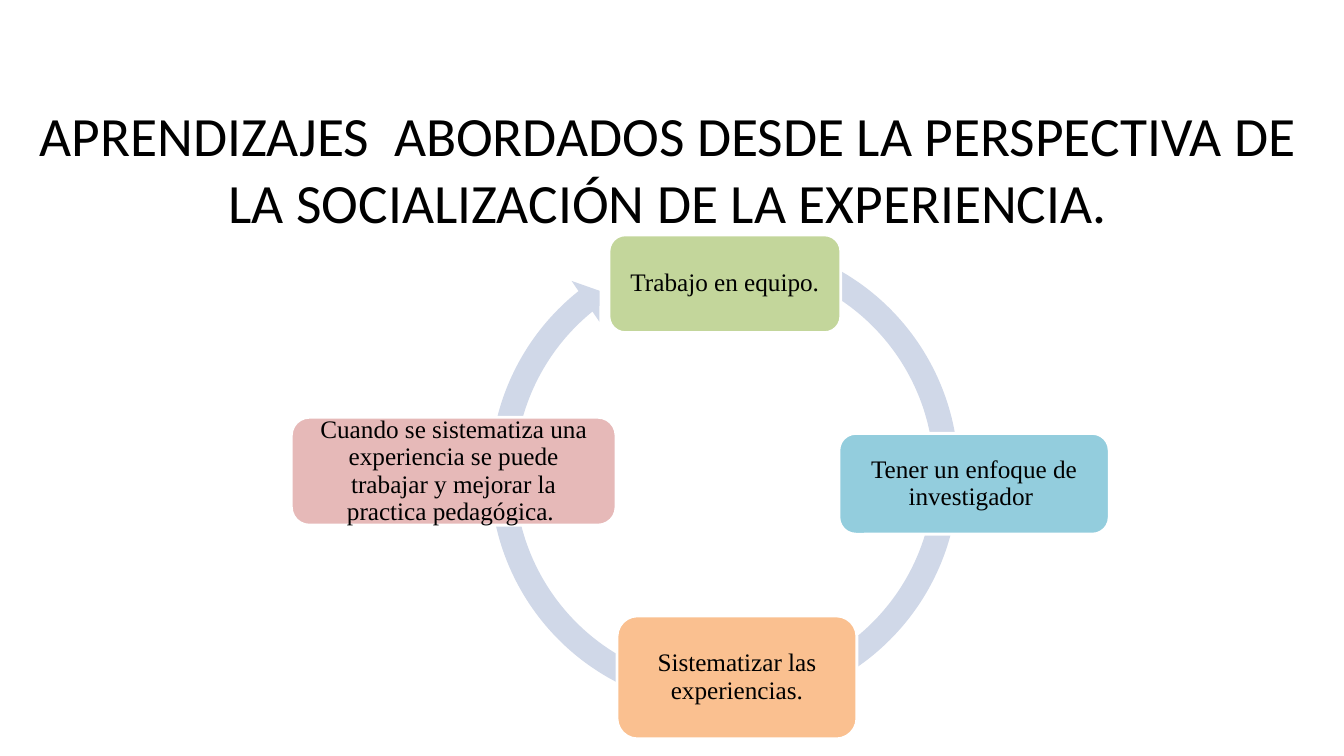
from dataclasses import dataclass

from pptx import Presentation
from pptx.dml.color import RGBColor
from pptx.enum.shapes import MSO_SHAPE as Shape
from pptx.enum.text import MSO_ANCHOR as Anchor, PP_ALIGN as Align
from pptx.util import Inches, Pt


@dataclass(frozen=True)
class Theme:
    ink: str = "000000"
    paper: str = "FFFFFF"
    ring: str = "D0D8E8"
    green: str = "C3D69B"
    blue: str = "93CDDD"
    orange: str = "FAC090"
    pink: str = "E6B9B8"
    title_font: str = "Calibri"
    step_font: str = "Times New Roman"
    title_size: float = 39.6
    step_size: float = 18
    border: float = 2


class CycleSlide:
    """Draws on one slide, with places given in percent of its width and height."""

    def __init__(self, deck, theme):
        self.deck = deck
        self.theme = theme
        self.page = deck.slides.add_slide(deck.slide_layouts[6])

    def place(self, left, top, width, height):
        across, down = self.deck.slide_width / 100, self.deck.slide_height / 100
        return [round(size) for size in (left * across, top * down, width * across, height * down)]

    def set_text(self, box, words, font, size, inset=(0.1, 0.05), spacing=1.0):
        frame = box.text_frame
        side, edge = (Inches(length) for length in inset)
        para = frame.paragraphs[0]
        span = para.add_run()
        span.text = words
        span.font.color.rgb = RGBColor.from_string(self.theme.ink)
        formats = (
            (frame, {"word_wrap": True, "vertical_anchor": Anchor.MIDDLE,
                     "margin_left": side, "margin_right": side,
                     "margin_top": edge, "margin_bottom": edge}),
            (para, {"alignment": Align.CENTER, "line_spacing": spacing}),
            (span.font, {"name": font, "size": Pt(size)}),
        )
        for target, values in formats:
            for name, value in values.items():
                setattr(target, name, value)

    def title(self, area, words):
        box = self.page.shapes.add_textbox(*self.place(*area))
        self.set_text(box, words, self.theme.title_font, self.theme.title_size)

    def shape(self, kind, area, color):
        box = self.page.shapes.add_shape(kind, *self.place(*area))
        box.shadow.inherit = False
        box.fill.solid()
        box.fill.fore_color.rgb = RGBColor.from_string(color)
        return box

    def ring(self, area, adjustments):
        arrow = self.shape(Shape.CIRCULAR_ARROW, area, self.theme.ring)
        arrow.line.fill.background()
        for index, value in enumerate(adjustments):
            arrow.adjustments[index] = value

    def step(self, area, color, words):
        box = self.shape(Shape.ROUNDED_RECTANGLE, area, color)
        box.line.color.rgb = RGBColor.from_string(self.theme.paper)
        box.line.width = Pt(self.theme.border)
        self.set_text(box, words, self.theme.step_font, self.theme.step_size, (0.12, 0.12), 0.9)


def main():
    deck = Presentation()
    deck.slide_width, deck.slide_height = Inches(13.33), Inches(7.5)
    theme = Theme()
    slide = CycleSlide(deck, theme)
    slide.title((0.98, 10.13, 97.45, 24.13),
                "APRENDIZAJES  ABORDADOS DESDE LA PERSPECTIVA DE "
                "LA SOCIALIZACIÓN DE LA EXPERIENCIA.")
    slide.ring((35.56, 30.13, 36.68, 65.2), (0.05, 2.73, 138.74, 173.62, 0.05))
    steps = (
        ((45.31, 31.07, 17.25, 12.93), theme.green, "Trabajo en equipo."),
        ((62.42, 57.33, 20.11, 13.33), theme.blue, "Tener un enfoque de investigador "),
        ((45.91, 81.47, 17.85, 16.27), theme.orange, "Sistematizar las experiencias."),
        ((21.68, 55.2, 24.16, 14.27), theme.pink,
         "Cuando se sistematiza una experiencia se puede trabajar "
         "y mejorar la practica pedagógica. "),
    )
    for area, color, words in steps:
        slide.step(area, color, words)
    deck.save("out.pptx")


if __name__ == "__main__":
    main()
